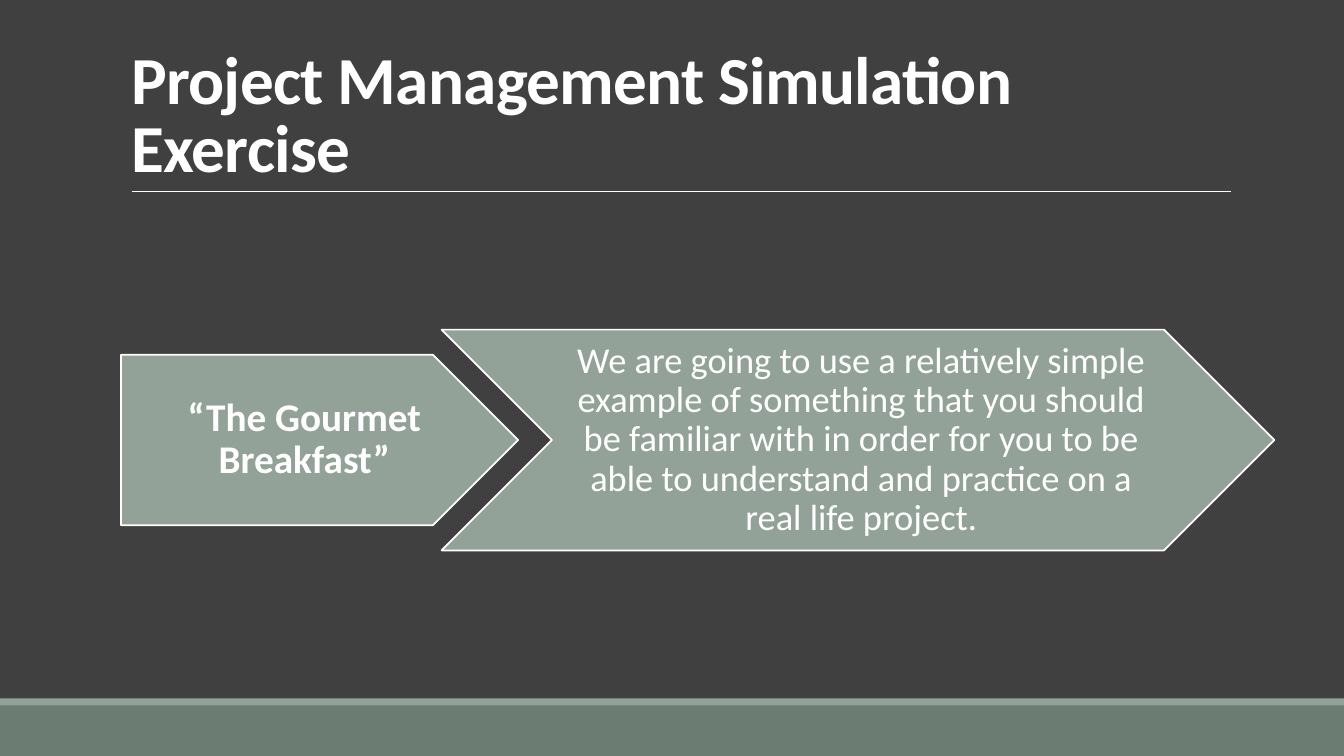
from lxml import etree
from pptx import Presentation
from pptx.dml.color import RGBColor
from pptx.enum.shapes import MSO_CONNECTOR, MSO_SHAPE
from pptx.enum.text import MSO_ANCHOR, MSO_AUTO_SIZE, PP_ALIGN
from pptx.oxml.ns import qn
from pptx.util import Inches, Pt

DARK = RGBColor(0x40, 0x40, 0x40)
GREEN = RGBColor(0x6B, 0x7D, 0x72)
SAGE = RGBColor(0x93, 0xA2, 0x99)
WHITE = RGBColor(0xFF, 0xFF, 0xFF)
FONT = "Calibri"
RECT, PLATE, CHEVRON = MSO_SHAPE.RECTANGLE, MSO_SHAPE.PENTAGON, MSO_SHAPE.CHEVRON
STRAIGHT = MSO_CONNECTOR.STRAIGHT
MIDDLE, BOTTOM = MSO_ANCHOR.MIDDLE, MSO_ANCHOR.BOTTOM
LEFT, CENTER = PP_ALIGN.LEFT, PP_ALIGN.CENTER
NO_FIT = MSO_AUTO_SIZE.NONE

WIDE, HIGH = 13.33, 7.5
EDGE = 1.2


def apply(target, values):
    for name, value in values.items():
        setattr(target, name, value)


def write(shape, text, size, bold, frame, para):
    body = shape.text_frame
    body.text = text
    apply(body, {"word_wrap": True, "auto_size": NO_FIT, **frame})
    first = body.paragraphs[0]
    apply(first, para)
    font = first.runs[0].font
    apply(font, {"name": FONT, "size": Pt(size), "bold": bold})
    font.color.rgb = WHITE
    return first.runs[0]


def block(slide, kind, box, fill):
    shape = slide.shapes.add_shape(kind, *map(Inches, box))
    shape.shadow.inherit = False
    shape.fill.solid()
    shape.fill.fore_color.rgb = fill
    shape.line.fill.background()
    return shape


def footer(slide, top, strip):
    """Draw a band down to the slide's foot, with a thin strip above it."""
    block(slide, RECT, (0, top, WIDE, HIGH - top), GREEN)
    block(slide, RECT, (0, top - strip, WIDE, strip), SAGE)


def header(slide, box, text):
    left, top, width, height = box
    title = slide.shapes.title
    apply(title, dict(zip(("left", "top", "width", "height"), map(Inches, box))))
    run = write(title, text, 48, True, {"vertical_anchor": BOTTOM},
                {"alignment": LEFT, "line_spacing": 0.85})
    run.font._element.set("spc", "-50")
    base, start = top + height, left + 0.11
    rule = slide.shapes.add_connector(
        STRAIGHT, *map(Inches, (start, base, start + 10.9, base)))
    rule.line.color.rgb = WHITE
    rule.line.width = Pt(0.5)
    etree.SubElement(rule._element.spPr, qn("a:effectLst"))


def arrow(slide, kind, box, text, size, bold, inset):
    shape = block(slide, kind, box, SAGE)
    shape.line.color.rgb = WHITE
    shape.line.width = Pt(1.25)
    write(shape, text, size, bold,
          {"vertical_anchor": MIDDLE, "margin_left": Inches(inset),
           "margin_right": Inches(0.04), "margin_top": Inches(0.08),
           "margin_bottom": Inches(0.08)},
          {"alignment": CENTER, "line_spacing": 0.9})


def process(slide, left, center):
    """Set the two arrows on one center line, the second nested over the first."""
    parts = (
        (PLATE, 0, 3.94, 1.69, "“The Gourmet Breakfast”", 28, True, 0.16),
        (CHEVRON, 3.18, 8.26, 2.19,
         "We are going to use a relatively simple example of something that "
         "you should be familiar with in order for you to be able to "
         "understand and practice on a real life project.", 26, False, 0.11),
    )
    for kind, shift, width, height, *text in parts:
        box = (left + shift, center - height / 2, width, height)
        arrow(slide, kind, box, *text)


def main():
    deck = Presentation()
    deck.slide_width, deck.slide_height = Inches(WIDE), Inches(HIGH)
    slide = deck.slides.add_slide(deck.slide_layouts[5])
    fill = slide.background.fill
    fill.solid()
    fill.fore_color.rgb = DARK
    footer(slide, 7, 0.07)
    header(slide, (EDGE, 0.31, 11, 1.59), "Project Management Simulation Exercise")
    process(slide, EDGE, 4.365)
    deck.save("out.pptx")


if __name__ == "__main__":
    main()
